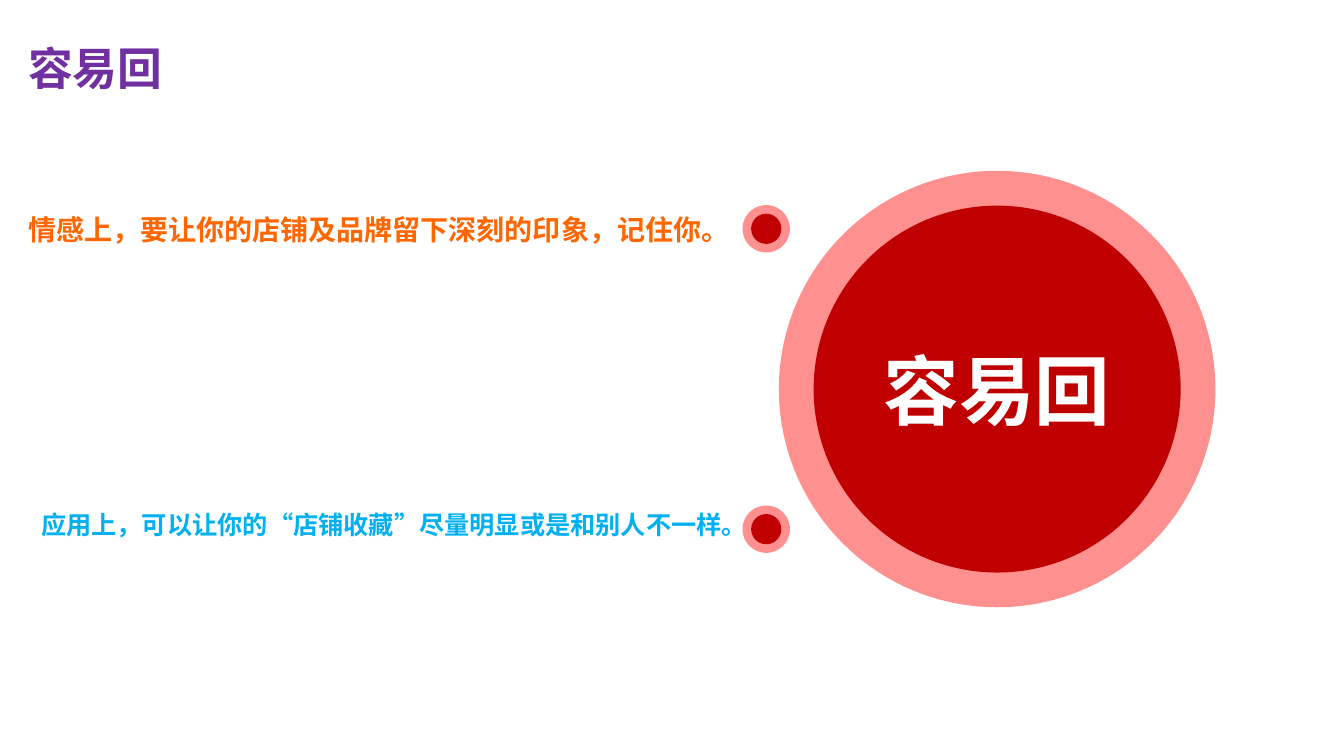
from dataclasses import dataclass

from lxml import etree
from pptx import Presentation
from pptx import util as u
from pptx.dml.color import RGBColor
from pptx.enum import shapes, text
from pptx.oxml import ns


@dataclass(frozen=True)
class Theme:
    rim: str = "FF9090"
    core: str = "C00000"
    white: str = "FFFFFF"
    purple: str = "7030A0"
    orange: str = "FF6600"
    blue: str = "00B0F0"
    latin: str = "Arial"
    cjk: str = "Noto Sans CJK SC"
    hub_size: int = 54
    title_size: int = 32
    large: int = 20
    small: int = 18


T = Theme()
WIDTH, HEIGHT = 13.33, 7.5

TOPIC = "容易回"
# text, size, colour, left, top, height, centre of its dot
POINTS = [
    ("情感上，要让你的店铺及品牌留下深刻的印象，记住你。",
     T.large, T.orange, 0.18, 2.06, 0.44, 2.27),
    ("应用上，可以让你的“店铺收藏”尽量明显或是和别人不一样。",
     T.small, T.blue, 0.31, 5.0, 0.4, 5.25),
]
POINT_WIDTH = 7.05
TITLE_BOX = (0.18, 0.35, 1.54, 0.64)
HUB = (9.89, 3.86, 4.33, 3.64)  # centre x, centre y, rim and core diameters
DOT_X, DOT_RIM, DOT_CORE = 7.6, 0.47, 0.3


def write(tf, words, size, color, font):
    p = tf.paragraphs[0]
    p.add_run().text = words
    f = p.font
    f.size, f.bold, f.name = u.Pt(size), True, font
    f.color.rgb = RGBColor.from_string(color)
    props = p._p.pPr.find(ns.qn("a:defRPr"))
    etree.SubElement(props, ns.qn("a:ea")).set("typeface", T.cjk)
    return p


def add_label(parent, box, words, size, color, font, wrap=True):
    tf = parent.add_textbox(*map(u.Inches, box)).text_frame
    tf.word_wrap = wrap
    tf.auto_size = text.MSO_AUTO_SIZE.SHAPE_TO_FIT_TEXT
    write(tf, words, size, color, font)


def add_ringed_disc(parent, x, y, rim, core):
    """Draw two concentric circles and return the inner one."""
    for diameter, color in ((rim, T.rim), (core, T.core)):
        s = parent.add_shape(shapes.MSO_SHAPE.OVAL,
                             u.Inches(x - diameter / 2), u.Inches(y - diameter / 2),
                             u.Inches(diameter), u.Inches(diameter))
        s.shadow.inherit = False
        s.fill.solid()
        s.fill.fore_color.rgb = RGBColor.from_string(color)
        s.line.fill.background()
    return s


def main():
    prs = Presentation()
    prs.slide_width, prs.slide_height = u.Inches(WIDTH), u.Inches(HEIGHT)
    sp = prs.slides.add_slide(prs.slide_layouts[6]).shapes

    tf = add_ringed_disc(sp, *HUB).text_frame
    tf.vertical_anchor = text.MSO_ANCHOR.MIDDLE
    p = write(tf, TOPIC, T.hub_size, T.white, T.cjk)
    p.alignment = text.PP_ALIGN.CENTER

    for words, size, color, left, top, height, dot_y in POINTS:
        add_ringed_disc(sp.add_group_shape().shapes, DOT_X, dot_y, DOT_RIM, DOT_CORE)
        add_label(sp, (left, top, POINT_WIDTH, height), words, size, color, T.latin)

    add_label(sp, TITLE_BOX, TOPIC, T.title_size, T.purple, T.cjk, wrap=False)
    prs.save("out.pptx")


if __name__ == "__main__":
    main()
